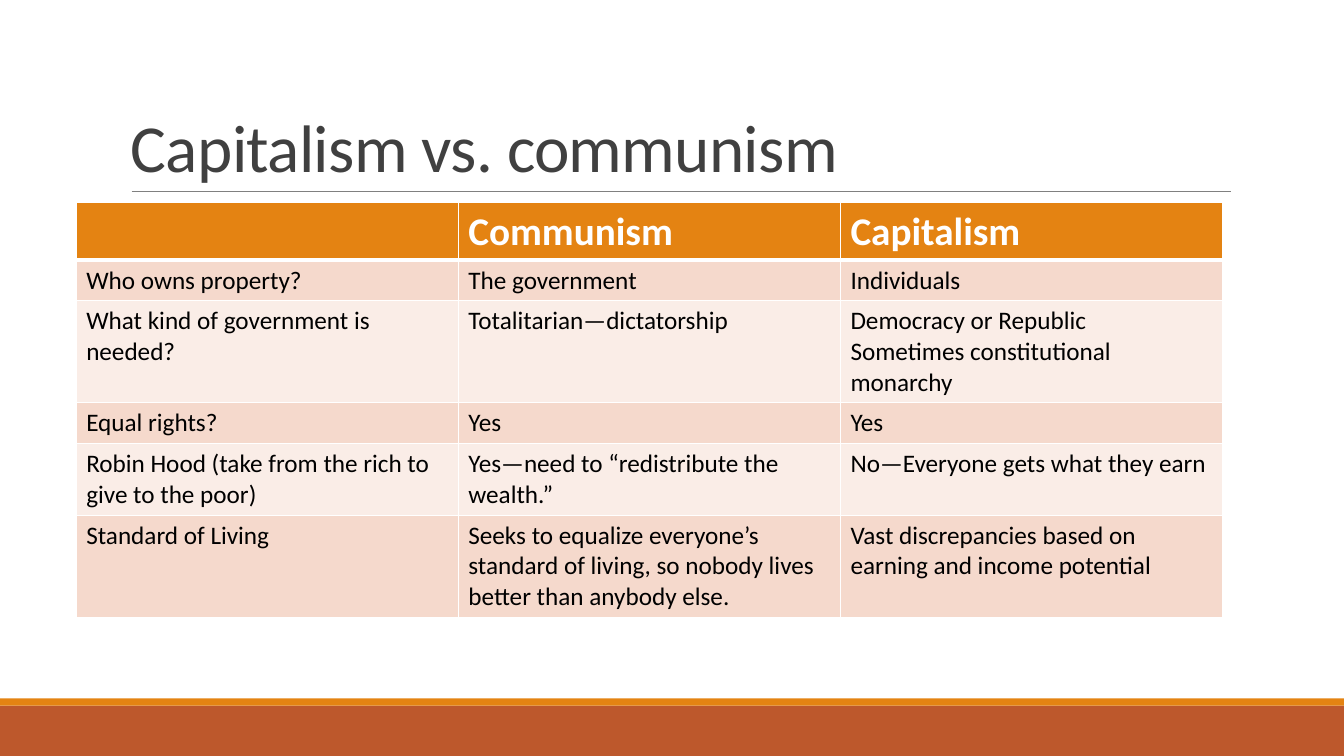
"""Builds a slide with a table comparing communism and capitalism."""
from lxml import etree
from pptx import Presentation
from pptx.dml.color import RGBColor
from pptx.enum.shapes import MSO_CONNECTOR, MSO_SHAPE
from pptx.enum.text import MSO_ANCHOR
from pptx.oxml.ns import qn
from pptx.util import Cm, Pt

RECTANGLE = MSO_SHAPE.RECTANGLE
STRAIGHT = MSO_CONNECTOR.STRAIGHT
BOTTOM = MSO_ANCHOR.BOTTOM
FONT = "Calibri"
COLORS = {
    "rust": "BD582C",
    "orange": "E48312",
    "rule": "808080",
    "title": "404040",
    "white": "FFFFFF",
    "black": "000000",
    "odd_row": "F5D9CC",
    "even_row": "FAEDE7",
}
COMPARISON = [
    ("", "Communism", "Capitalism"),
    ("Who owns property?", "The government", "Individuals"),
    ("What kind of government is needed?", "Totalitarian—dictatorship",
     "Democracy or Republic\nSometimes constitutional monarchy"),
    ("Equal rights?", "Yes", "Yes"),
    ("Robin Hood (take from the rich to give to the poor)",
     "Yes—need to “redistribute the wealth.”",
     "No—Everyone gets what they earn"),
    ("Standard of Living",
     "Seeks to equalize everyone’s standard of living, so nobody lives "
     "better than anybody else.",
     "Vast discrepancies based on earning and income potential"),
]
ROW_HEIGHTS = [1.44, 1.03, 2.57, 1.03, 1.8, 2.57]
COLUMN_WIDTH = 9.63


def rgb(name):
    return RGBColor.from_string(COLORS[name])


def style_font(font, size, color, bold=False):
    font.name = FONT
    font.size = Pt(size)
    font.bold = bold
    font.color.rgb = rgb(color)


def add_band(slide, top, height, color):
    band = slide.shapes.add_shape(RECTANGLE, 0, Cm(top), Cm(33.87), Cm(height))
    band.shadow.inherit = False
    band.fill.solid()
    band.fill.fore_color.rgb = rgb(color)
    band.line.fill.background()


def add_rule(slide, left, right, top):
    rule = slide.shapes.add_connector(STRAIGHT, Cm(left), Cm(top), Cm(right), Cm(top))
    rule.line.color.rgb = rgb("rule")
    rule.line.width = Pt(0.5)
    etree.SubElement(rule._element.spPr, qn("a:effectLst"))


def add_title(slide, wording):
    title = slide.shapes.add_textbox(Cm(3.05), Cm(0.79), Cm(27.94), Cm(4.04))
    frame = title.text_frame
    frame.word_wrap = True
    frame.vertical_anchor = BOTTOM
    frame.text = wording
    paragraph = frame.paragraphs[0]
    paragraph.line_spacing = 0.85
    run = paragraph.runs[0]
    style_font(run.font, 48, "title")
    run.font._element.set("spc", "-50")


def set_borders(cell, widths):
    properties = cell._tc.get_or_add_tcPr()
    for position, (side, width) in enumerate(widths.items()):
        border = etree.Element(qn(f"a:ln{side}"), w=str(Pt(width)))
        fill = etree.SubElement(border, qn("a:solidFill"))
        etree.SubElement(fill, qn("a:srgbClr"), val=COLORS["white"])
        properties.insert(position, border)


def fill_cell(cell, wording, row):
    header = row == 0
    cell.text = wording
    for paragraph in cell.text_frame.paragraphs:
        for run in paragraph.runs:
            if header:
                style_font(run.font, 28, "white", bold=True)
            else:
                style_font(run.font, 18, "black")
    cell.fill.solid()
    stripe = "odd_row" if row % 2 else "even_row"
    cell.fill.fore_color.rgb = rgb("orange" if header else stripe)
    set_borders(cell, {"L": 1, "R": 1, "T": 3 if row == 1 else 1, "B": 3 if header else 1})


def add_comparison(slide, left, top):
    columns = len(COMPARISON[0])
    table = slide.shapes.add_table(
        len(COMPARISON), columns, Cm(left), Cm(top),
        Cm(COLUMN_WIDTH * columns), Cm(sum(ROW_HEIGHTS))).table
    for column in table.columns:
        column.width = Cm(COLUMN_WIDTH)
    for row, (wordings, height) in enumerate(zip(COMPARISON, ROW_HEIGHTS)):
        table.rows[row].height = Cm(height)
        for column, wording in enumerate(wordings):
            fill_cell(table.cell(row, column), wording, row)


def main():
    presentation = Presentation()
    presentation.slide_width = Cm(33.87)
    presentation.slide_height = Cm(19.05)
    slide = presentation.slides.add_slide(presentation.slide_layouts[6])
    add_band(slide, 17.78, 1.27, "rust")
    add_band(slide, 17.6, 0.18, "orange")
    add_rule(slide, 3.32, 31.01, 4.83)
    add_title(slide, "Capitalism vs. communism")
    add_comparison(slide, 1.92, 5.11)
    presentation.save("out.pptx")


if __name__ == "__main__":
    main()
